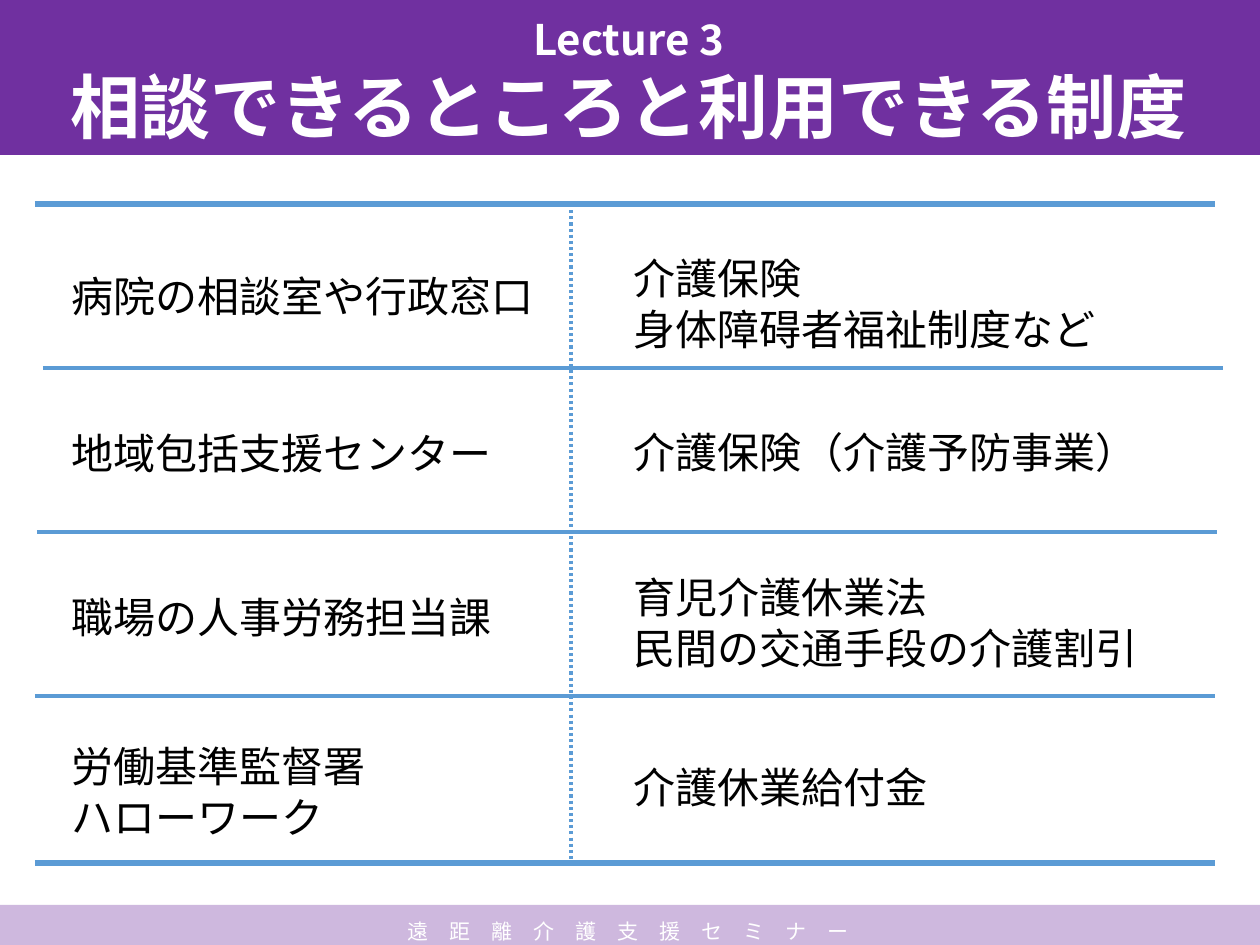
from pptx import Presentation
from pptx import util as u
from pptx.dml.color import RGBColor
from pptx.enum import dml, shapes, text
from pptx.oxml.ns import qn
from lxml import etree

PX = 914400 // 126
FONT = "Noto Sans CJK JP"
PURPLE, BLUE, WHITE, BLACK = "7030A0", "5B9BD5", "FFFFFF", "000000"


def rgb(value):
    return RGBColor.from_string(value)


def write(sp, content, sizes, color, align, insets, bold=False):
    """Fill a shape with one paragraph per line, sizes in points per line."""
    tf = sp.text_frame
    tf.text = content
    tf.word_wrap = True
    tf.auto_size = text.MSO_AUTO_SIZE.NONE
    tf.margin_left = tf.margin_right = u.Inches(0.1)
    tf.margin_top, tf.margin_bottom = [px * PX for px in insets]
    for p, size in zip(tf.paragraphs, sizes):
        p.alignment = align
        p.line_spacing = u.Pt(round(size * 1.21))
        for r in p.runs:
            r.font.size = u.Pt(size)
            r.font.bold = bold
            r.font.color.rgb = rgb(color)
            r.font.name = FONT
            etree.SubElement(r.font._element, qn("a:ea"), typeface=FONT)


prs = Presentation()
prs.slide_width, prs.slide_height = 1260 * PX, 945 * PX
s = prs.slides.add_slide(prs.slide_layouts[5])

# Header band
title = s.shapes.title
title.left, title.top, title.width, title.height = [px * PX for px in (-3, -3, 1263, 158)]
title.fill.solid()
title.fill.fore_color.rgb = rgb(PURPLE)
write(title, "Lecture 3\n相談できるところと利用できる制度", (24, 40), WHITE,
      text.PP_ALIGN.CENTER, (8, 0), bold=True)
title.text_frame.vertical_anchor = text.MSO_ANCHOR.MIDDLE

# Footer band
footer = s.shapes.add_shape(shapes.MSO_SHAPE.RECTANGLE, -3 * PX, 905 * PX, 1263 * PX, 40 * PX)
footer.shadow.inherit = False
footer.line.fill.background()
footer.fill.solid()
footer.fill.fore_color.rgb = rgb(PURPLE)
color = footer._element.spPr.find(".//" + qn("a:srgbClr"))
etree.SubElement(color, qn("a:alpha"), val="34000")
write(footer, "遠　距　離　介　護　支　援　セ　ミ　ナ　ー", (12,), WHITE,
      text.PP_ALIGN.CENTER, (6, 6))
footer.text_frame.vertical_anchor = text.MSO_ANCHOR.MIDDLE
footer.text_frame.paragraphs[0].line_spacing = 1.5

# Where to ask (left) and what can be used (right): left, top, width, wording
entries = [
    (59, 261, 491, "病院の相談室や行政窓口"),
    (59, 418, 450, "地域包括支援センター"),
    (59, 582, 450, "職場の人事労務担当課"),
    (59, 731, 491, "労働基準監督署\nハローワーク"),
    (621, 243, 491, "介護保険\n身体障碍者福祉制度など"),
    (621, 417, 534, "介護保険（介護予防事業）"),
    (621, 562, 534, "育児介護休業法\n民間の交通手段の介護割引"),
    (621, 752, 324, "介護休業給付金"),
]
for left, top, width, wording in entries:
    lines = wording.count("\n") + 1
    box = s.shapes.add_textbox(left * PX, top * PX, width * PX, (13 + 51 * lines) * PX)
    write(box, wording, [24] * lines, BLACK, text.PP_ALIGN.LEFT, (9, 3))

# Row rules and the dotted column divider: x1, y1, x2, y2, points
rules = [
    (35, 204, 1215, 204, 3.5),
    (43, 368, 1223, 368, 2),
    (37, 532, 1217, 532, 2),
    (35, 696, 1215, 696, 2),
    (35, 863, 1215, 863, 3.5),
    (571, 204, 571, 867, 1.75),
]
for *ends, weight in rules:
    rule = s.shapes.add_connector(shapes.MSO_CONNECTOR.STRAIGHT, *[px * PX for px in ends])
    rule.line.color.rgb = rgb(BLUE)
    rule.line.width = u.Pt(weight)
    if ends[0] == ends[2]:
        rule.line.dash_style = dml.MSO_LINE.ROUND_DOT
    etree.SubElement(rule._element.spPr, qn("a:effectLst"))

prs.save("out.pptx")
